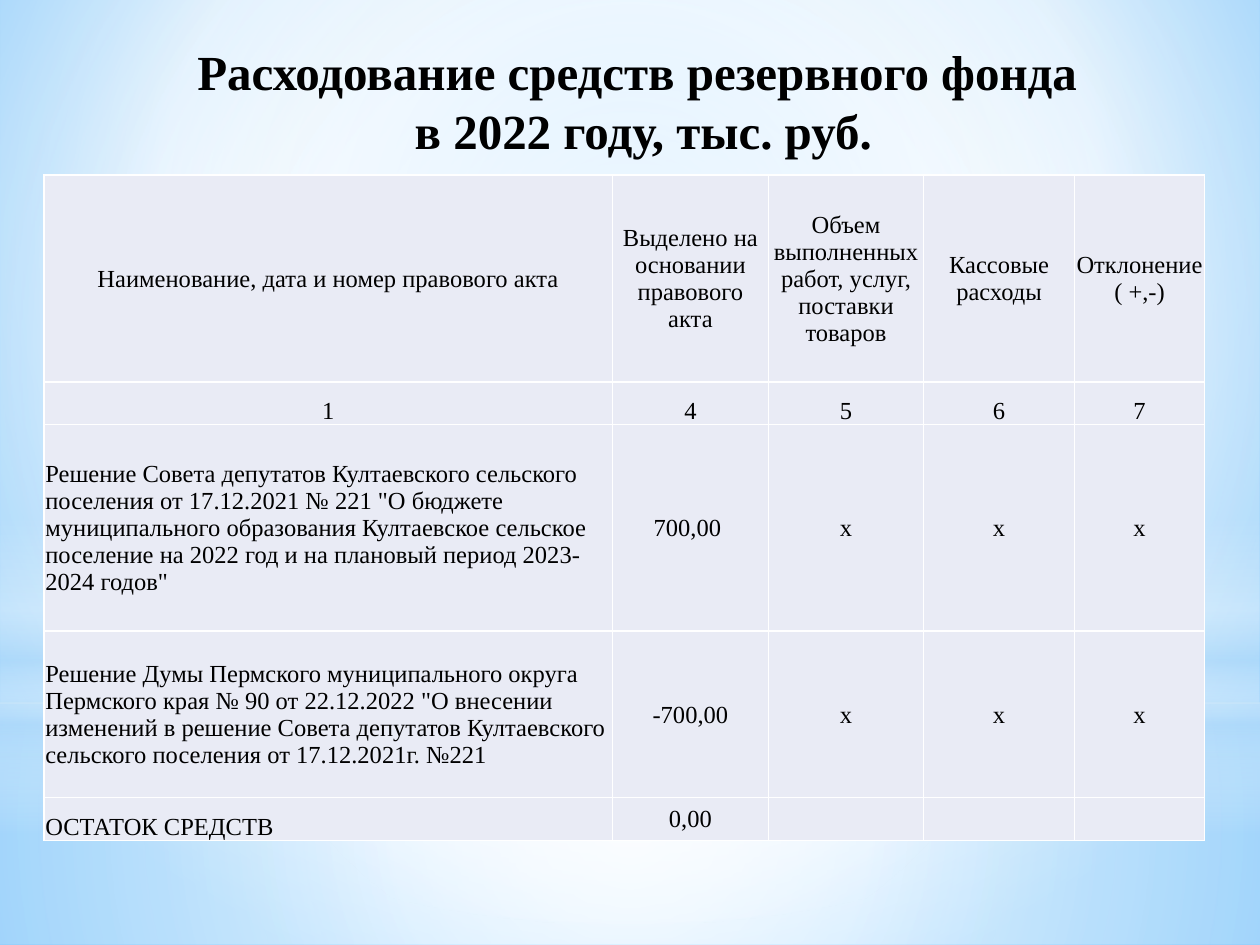
"""Build the reserve fund spending slide."""
from lxml import etree
from pptx import Presentation
from pptx.dml.color import RGBColor
from pptx.enum import shapes, text
from pptx.oxml.ns import qn
from pptx.util import Inches, Pt

FONT = "Times New Roman"
COLORS = {"white": "FFFFFF", "ink": "000000", "cell": "E9EBF5",
          "sky": "9ED5FF", "blue": "5BB9FF", "mist": "B4DCFA"}
CENTER = (50, 50, 50, 50)
BACKGROUND = [(0, "sky", 100), (60, "white", 100), (100, "blue", 100)]
RECT, OVAL = shapes.MSO_SHAPE.RECTANGLE, shapes.MSO_SHAPE.OVAL
GLOWS = [
    (RECT, 5.58, 1.92, [(0, "white", 91), (37, "white", 76), (100, "mist", 79)], CENTER),
    (RECT, 0, 5.58, [(0, "white", 89), (48, "white", 62), (100, "mist", 79)], CENTER),
    (RECT, 4.12, 2.5, [(0, "white", 0), (29, "white", 30), (45, "mist", 40),
                       (55, "white", 26), (65, "mist", 60), (100, "white", 0)], None),
    (OVAL, 1.75, 5.58, [(0, "white", 100), (56, "white", 0)], CENTER),
]
TITLE = "Расходование средств резервного фонда \vв 2022 году, тыс. руб."
ROWS = [
    ("Наименование, дата и номер правового акта", "Выделено на основании правового акта",
     "Объем выполненных работ, услуг, поставки товаров", "Кассовые расходы",
     "Отклонение ( +,-)"),
    ("1", "4", "5", "6", "7"),
    ('Решение Совета депутатов Култаевского сельского поселения от 17.12.2021 № 221 '
     '"О бюджете муниципального образования Култаевское сельское поселение на 2022 год '
     'и на плановый период 2023-2024 годов"', "700,00 ", "х", "х", "х"),
    ('Решение Думы Пермского муниципального округа Пермского края № 90 от 22.12.2022 '
     '"О внесении изменений в решение Совета депутатов Култаевского сельского поселения '
     'от 17.12.2021г. №221', "-700,00", "х", "х", "х"),
    ("ОСТАТОК СРЕДСТВ", "0,00", "", "", ""),
]
COL_WIDTHS = [4.51, 1.24, 1.23, 1.2, 1.03]
ROW_HEIGHTS = [1.64, 0.34, 1.64, 1.32, 0.34]
BOTTOM_CELLS = {(1, c) for c in range(5)} | {(4, 0)}


def rgb(name):
    return RGBColor.from_string(COLORS[name])


def set_gradient(fill, root, stops, focus):
    fill.solid()
    solid = root.find(".//" + qn("a:solidFill"))
    grad = etree.Element(qn("a:gradFill"), rotWithShape="1")
    stop_list = etree.SubElement(grad, qn("a:gsLst"))
    for pos, color, alpha in stops:
        stop = etree.SubElement(stop_list, qn("a:gs"), pos=str(pos * 1000))
        clr = etree.SubElement(stop, qn("a:srgbClr"), val=COLORS[color])
        if alpha < 100:
            etree.SubElement(clr, qn("a:alpha"), val=str(alpha * 1000))
    if focus:
        circle = etree.SubElement(grad, qn("a:path"), path="circle")
        sides = {side: str(v * 1000) for side, v in zip("ltrb", focus)}
        etree.SubElement(circle, qn("a:fillToRect"), sides)
    else:
        etree.SubElement(grad, qn("a:lin"), ang="5400000", scaled="0")
    solid.getparent().replace(solid, grad)


def style_text(p, size, bold=False, align=text.PP_ALIGN.CENTER):
    p.alignment = align
    for font in [p.font] + [r.font for r in p.runs]:
        font.name, font.size, font.bold = FONT, Pt(size), bold
        font.color.rgb = rgb("ink")


def add_borders(cell):
    pr = cell._tc.get_or_add_tcPr()
    for i, side in enumerate(("lnL", "lnR", "lnT", "lnB")):
        ln = etree.Element(qn("a:" + side), w=str(Pt(1)))
        solid = etree.SubElement(ln, qn("a:solidFill"))
        etree.SubElement(solid, qn("a:srgbClr"), val=COLORS["white"])
        pr.insert(i, ln)


def add_glows(s):
    for kind, top, height, stops, focus in GLOWS:
        sp = s.shapes.add_shape(kind, 0, Inches(top), Inches(10), Inches(height))
        sp.shadow.inherit = False
        sp.line.fill.background()
        set_gradient(sp.fill, sp._element, stops, focus)


def place_title(s):
    title = s.shapes.title
    s.shapes._spTree.append(title._element)
    title.left, title.top = Inches(0.59), Inches(0.24)
    title.width, title.height = Inches(9.03), Inches(0.59)
    tf = title.text_frame
    tf.text = TITLE
    tf.auto_size = text.MSO_AUTO_SIZE.NONE
    tf.vertical_anchor = text.MSO_ANCHOR.TOP
    tf.margin_top = Inches(0.09)
    style_text(tf.paragraphs[0], 28, bold=True)


def add_fund_table(s):
    table = s.shapes.add_table(
        len(ROWS), len(COL_WIDTHS), Inches(0.35), Inches(1.39),
        Inches(sum(COL_WIDTHS)), Inches(sum(ROW_HEIGHTS))).table
    table.first_row = table.horz_banding = False
    for col, width in zip(table.columns, COL_WIDTHS):
        col.width = Inches(width)
    for r, (values, height) in enumerate(zip(ROWS, ROW_HEIGHTS)):
        table.rows[r].height = Inches(height)
        for c, value in enumerate(values):
            cell = table.cell(r, c)
            cell.text_frame.text = value
            cell.margin_left = cell.margin_right = cell.margin_top = Inches(0.01)
            cell.margin_bottom = 0
            cell.vertical_anchor = (text.MSO_ANCHOR.BOTTOM if (r, c) in BOTTOM_CELLS
                                    else text.MSO_ANCHOR.MIDDLE)
            cell.fill.solid()
            cell.fill.fore_color.rgb = rgb("cell")
            add_borders(cell)
            left = c == 0 and r >= 2
            style_text(cell.text_frame.paragraphs[0], 14,
                       align=text.PP_ALIGN.LEFT if left else text.PP_ALIGN.CENTER)


def main():
    prs = Presentation()
    prs.slide_width, prs.slide_height = Inches(10), Inches(7.5)
    s = prs.slides.add_slide(prs.slide_layouts[5])
    set_gradient(s.background.fill, s._element, BACKGROUND, (20, 10, 20, 60))
    add_glows(s)
    place_title(s)
    add_fund_table(s)
    prs.save("out.pptx")


if __name__ == "__main__":
    main()
